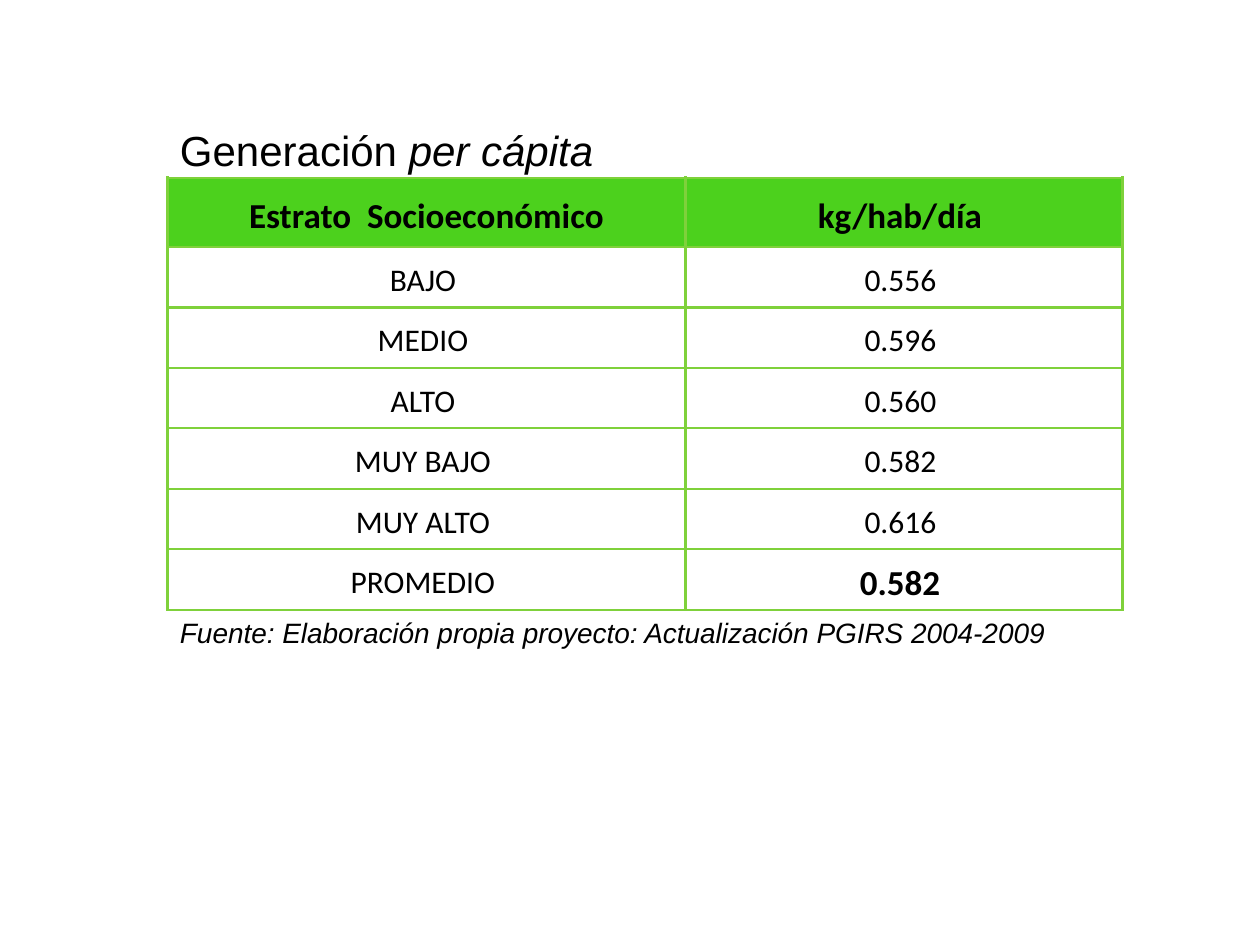
from lxml import etree
from pptx import Presentation
from pptx.dml.color import RGBColor
from pptx.enum.text import MSO_ANCHOR, MSO_AUTO_SIZE, PP_ALIGN
from pptx.oxml.ns import qn
from pptx.util import Inches, Pt

BLACK = RGBColor(0x00, 0x00, 0x00)
HEADER_GREEN = RGBColor(0x4C, 0xD1, 0x1D)
BORDER_GREEN = RGBColor(0x7F, 0xD1, 0x3B)
CENTER = PP_ALIGN.CENTER
MIDDLE = MSO_ANCHOR.MIDDLE
GROW = MSO_AUTO_SIZE.SHAPE_TO_FIT_TEXT

HEADERS = ("Estrato  Socioeconómico", "kg/hab/día ")
STRATA = (
    ("BAJO ", "0.556 "),
    ("MEDIO ", "0.596 "),
    ("ALTO ", "0.560 "),
    ("MUY BAJO ", "0.582 "),
    ("MUY ALTO ", "0.616 "),
    ("PROMEDIO ", "0.582 "),
)
COLUMN_WIDTHS = (4.11, 3.47)
HEADER_HEIGHT = 0.55
ROW_HEIGHT = 0.48


def add_span(para, text, font_name, size, bold=False, italic=False):
    """Add one formatted run to a paragraph."""
    span = para.add_run()
    span.text = text
    span.font.name = font_name
    span.font.size = Pt(size)
    span.font.bold = bold
    span.font.italic = italic
    span.font.color.rgb = BLACK


def add_text_line(page, left, top, width, height, size, pieces):
    """Place a text line made of (text, italic) pieces."""
    box = page.shapes.add_textbox(
        Inches(left), Inches(top), Inches(width), Inches(height))
    box.text_frame.word_wrap = True
    box.text_frame.auto_size = GROW
    for text, italic in pieces:
        add_span(box.text_frame.paragraphs[0], text, "Arial", size, italic=italic)


def add_borders(cell):
    """Draw a green line on all four sides of a cell."""
    properties = cell._tc.get_or_add_tcPr()
    for side in ("lnL", "lnR", "lnT", "lnB"):
        line = etree.SubElement(properties, qn(f"a:{side}"), w=str(Pt(1.5)))
        fill = etree.SubElement(line, qn("a:solidFill"))
        etree.SubElement(fill, qn("a:srgbClr"), val=str(BORDER_GREEN))


def fill_cell(cell, text, header, strong):
    """Format one table cell and write its text."""
    add_borders(cell)
    if header:
        cell.fill.solid()
        cell.fill.fore_color.rgb = HEADER_GREEN
    else:
        cell.fill.background()
    cell.vertical_anchor = MIDDLE
    cell.margin_left = cell.margin_right = Inches(0.07)
    cell.margin_top = Inches(0.01)
    cell.margin_bottom = 0
    para = cell.text_frame.paragraphs[0]
    para.alignment = CENTER
    para.line_spacing = 1.15
    para.space_after = Pt(10)
    add_span(para, text, "Calibri", 20 if strong else 18, bold=strong)


def add_strata_table(page, left, top, width, height):
    """Place the table of waste generation by stratum."""
    rows = (HEADERS, *STRATA)
    table = page.shapes.add_table(
        len(rows), len(HEADERS),
        Inches(left), Inches(top), Inches(width), Inches(height)).table
    table.horz_banding = False
    for column, column_width in zip(table.columns, COLUMN_WIDTHS):
        column.width = Inches(column_width)
    for row_index, texts in enumerate(rows):
        header = row_index == 0
        table.rows[row_index].height = Inches(HEADER_HEIGHT if header else ROW_HEIGHT)
        for column_index, text in enumerate(texts):
            average = row_index == len(rows) - 1 and column_index == 1
            fill_cell(table.cell(row_index, column_index), text, header,
                      header or average)


def main():
    """Build and save the deck."""
    deck = Presentation()
    deck.slide_width = Inches(10)
    deck.slide_height = Inches(7.5)
    page = deck.slides.add_slide(deck.slide_layouts[6])
    add_strata_table(page, 1.33, 1.41, sum(COLUMN_WIDTHS),
                     HEADER_HEIGHT + ROW_HEIGHT * len(STRATA))
    add_text_line(page, 1.33, 4.84, 7.42, 0.37, 16, [
        ("Fuente: Elaboración propia proyecto: Actualización PGIRS 2004-2009", True)])
    add_text_line(page, 1.33, 0.94, 7.42, 0.5, 24, [
        ("Generación ", False), ("per cápita", True)])
    deck.save("out.pptx")


if __name__ == "__main__":
    main()
